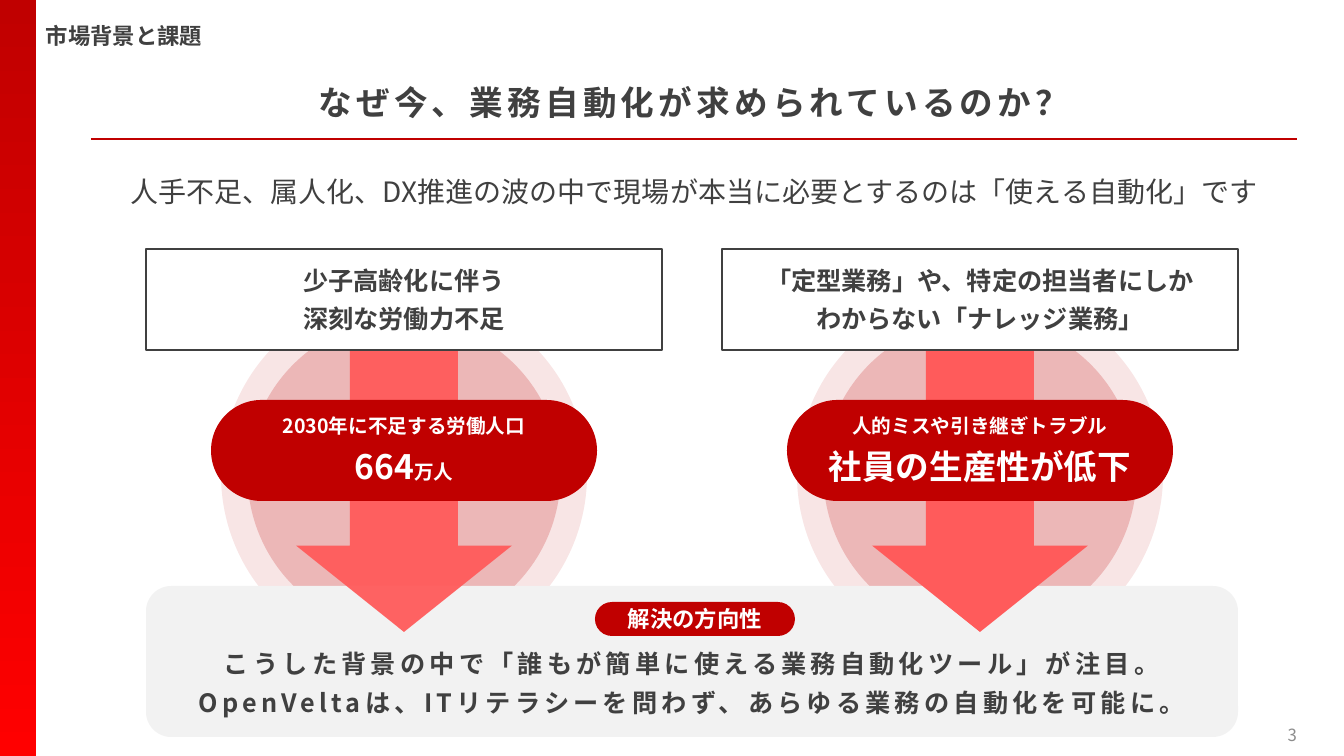
"""Build the market background slide on why business automation is needed now."""
from dataclasses import dataclass

from lxml.etree import SubElement
from pptx import Presentation
from pptx.dml.color import RGBColor
from pptx.enum.shapes import MSO_CONNECTOR, MSO_SHAPE
from pptx.enum.text import MSO_ANCHOR, MSO_AUTO_SIZE, PP_ALIGN
from pptx.oxml.ns import qn
from pptx.util import Emu, Pt

SECTION = "市場背景と課題"
HEADING = "なぜ今、業務自動化が求められているのか？"
LEAD = "人手不足、属人化、DX推進の波の中で現場が本当に必要とするのは「使える自動化」です"
PAGE = "3"
CAUSES = [
    {
        "cause": ["少子高齢化に伴う", "深刻な労働力不足"],
        "caption": "2030年に不足する労働人口",
        "effect": [("664", "large"), ("万人", "small")],
        "arrow_opacity": 95,
    },
    {
        "cause": ["「定型業務」や、特定の担当者にしか", "わからない「ナレッジ業務」"],
        "caption": "人的ミスや引き継ぎトラブル",
        "effect": [("社員の生産性が低下", "large")],
        "arrow_opacity": 100,
    },
]
SOLUTION_LABEL = "解決の方向性"
SOLUTION = [
    "こうした背景の中で「誰もが簡単に使える業務自動化ツール」が注目。",
    "OpenVeltaは、ITリテラシーを問わず、あらゆる業務の自動化を可能に。",
]


@dataclass(frozen=True)
class Theme:
    font: str = "Noto Sans CJK JP"
    red: str = "C00000"
    bright: str = "FF0000"
    arrow: str = "FF5B5B"
    ink: str = "404040"
    white: str = "FFFFFF"
    panel: str = "F2F2F2"
    muted: str = "8C8C8C"
    large: int = 24
    lead: int = 20
    body: int = 18
    label: int = 16
    small: int = 14
    page: int = 12


THEME = Theme()
EMU_PER_PX = 914400 / 100.8
SLIDE_W, SLIDE_H = 1344, 756
RAIL_W = 36
RULE_LEFT, RULE_W, RULE_Y = 91, 1206, 139
PANEL_LEFT, PANEL_W, PANEL_TOP, PANEL_H = 146, 1092, 586, 151
CAUSE_W, CAUSE_TOP, CAUSE_H = 516, 249, 101
ARROW_W, ARROW_H = 216, 282
PILL_W, PILL_TOP, PILL_H = 386, 400, 101
RING_MIDDLE = 475
RINGS = [(366, 10), (313, 20)]


def px(length):
    return Emu(round(length * EMU_PER_PX))


def place(shape, left, top, width, height):
    shape.left, shape.top, shape.width, shape.height = map(px, (left, top, width, height))


def add_block(preset, box, color, opacity=100, outline=None, adjustments=()):
    block = slide.shapes.add_shape(preset, *map(px, box))
    block.shadow.inherit = False
    for index, value in enumerate(adjustments):
        block.adjustments[index] = value
    block.fill.solid()
    block.fill.fore_color.rgb = RGBColor.from_string(color)
    if opacity < 100:
        tint = block.fill._xPr.find(qn("a:solidFill"))[0]
        SubElement(tint, qn("a:alpha"), val=str(opacity * 1000))
    if outline:
        block.line.color.rgb = RGBColor.from_string(outline)
        block.line.width = Pt(1.5)
    else:
        block.line.fill.background()
    return block


def style_run(run, size, color, bold, spacing):
    run.font.size = Pt(size)
    run.font.bold = bold
    run.font.name = THEME.font
    run.font.color.rgb = RGBColor.from_string(color)
    properties = run._r.get_or_add_rPr()
    SubElement(properties, qn("a:ea"), typeface=THEME.font)
    if spacing:
        properties.set("spc", str(spacing * 100))


def write(shape, lines, size, color=THEME.ink, bold=True, align=PP_ALIGN.CENTER,
          anchor=MSO_ANCHOR.MIDDLE, before=0, after=0, leading=1.0, spacing=0):
    frame = shape.text_frame
    frame.text = "\n".join(lines)
    frame.word_wrap = True
    frame.auto_size = MSO_AUTO_SIZE.NONE
    frame.vertical_anchor = anchor
    for paragraph in frame.paragraphs:
        paragraph.alignment = align
        paragraph.space_before, paragraph.space_after = Pt(before), Pt(after)
        paragraph.line_spacing = leading
        for run in paragraph.runs:
            style_run(run, size, color, bold, spacing)
    return frame


def add_label(box, text, size, **options):
    return write(slide.shapes.add_textbox(*map(px, box)), [text], size, **options)


def add_pill(box):
    return add_block(MSO_SHAPE.ROUNDED_RECTANGLE, box, THEME.red, adjustments=(0.5,))


def add_rings(center):
    for size, opacity in RINGS:
        box = (center - size / 2, RING_MIDDLE - size / 2, size, size)
        add_block(MSO_SHAPE.OVAL, box, THEME.red, opacity)


def add_cause(center, item):
    add_block(MSO_SHAPE.DOWN_ARROW,
              (center - ARROW_W / 2, CAUSE_TOP + CAUSE_H, ARROW_W, ARROW_H),
              THEME.arrow, item["arrow_opacity"], adjustments=(0.5, 0.4))
    cause = add_block(MSO_SHAPE.RECTANGLE,
                      (center - CAUSE_W / 2, CAUSE_TOP, CAUSE_W, CAUSE_H),
                      THEME.white, outline=THEME.ink)
    write(cause, item["cause"], THEME.body, after=6)
    pill = add_pill((center - PILL_W / 2, PILL_TOP, PILL_W, PILL_H))
    frame = write(pill, [item["caption"], ""], THEME.small, THEME.white, before=6)
    for text, level in item["effect"]:
        run = frame.paragraphs[1].add_run()
        run.text = text
        style_run(run, getattr(THEME, level), THEME.white, True, 0)


def add_solution():
    panel = add_block(MSO_SHAPE.ROUNDED_RECTANGLE,
                      (PANEL_LEFT, PANEL_TOP, PANEL_W, PANEL_H), THEME.panel)
    frame = write(panel, SOLUTION, THEME.body, anchor=MSO_ANCHOR.BOTTOM, after=6, spacing=3)
    frame.margin_bottom = px(12)


def add_header():
    heading = slide.shapes.title
    place(heading, RULE_LEFT, 78, RULE_W, 63)
    frame = write(heading, [HEADING], THEME.large, anchor=MSO_ANCHOR.TOP,
                  after=12, leading=0.9, spacing=3)
    frame.margin_top = px(8)
    lead = slide.placeholders[1]
    place(lead, RULE_LEFT, 142, RULE_W, 92)
    frame = write(lead, [LEAD], THEME.lead, bold=False, before=10, after=12, leading=1.2)
    properties = frame.paragraphs[0]._p.get_or_add_pPr()
    properties.set("marL", "0")
    properties.set("indent", "0")
    SubElement(properties, qn("a:buNone"))
    rule = slide.shapes.add_connector(
        MSO_CONNECTOR.STRAIGHT, *map(px, (RULE_LEFT, RULE_Y, RULE_LEFT + RULE_W, RULE_Y)))
    rule.line.color.rgb = RGBColor.from_string(THEME.red)
    rule.line.width = Pt(2)
    SubElement(rule._element.spPr, qn("a:effectLst"))
    add_label((RAIL_W, 10, 384, 52), SECTION, THEME.label, align=PP_ALIGN.LEFT)


def add_rail():
    rail = add_block(MSO_SHAPE.RECTANGLE, (0, 0, RAIL_W, SLIDE_H), THEME.red)
    rail.fill.gradient()
    rail.fill.gradient_angle = 270
    for stop, color in zip(rail.fill.gradient_stops, (THEME.red, THEME.bright)):
        stop.color.rgb = RGBColor.from_string(color)


deck = Presentation()
deck.slide_width, deck.slide_height = px(SLIDE_W), px(SLIDE_H)
slide = deck.slides.add_slide(deck.slide_layouts[1])
centers = [PANEL_LEFT + CAUSE_W / 2, PANEL_LEFT + PANEL_W - CAUSE_W / 2]

add_header()
for center in centers:
    add_rings(center)
add_solution()
for center, item in zip(centers, CAUSES):
    add_cause(center, item)
write(add_pill((595, 602, 200, 34)), [SOLUTION_LABEL], THEME.label, THEME.white)
add_label((1005, 715, 302, 40), PAGE, THEME.page, color=THEME.muted, bold=False,
          align=PP_ALIGN.RIGHT)
add_rail()
deck.save("out.pptx")
